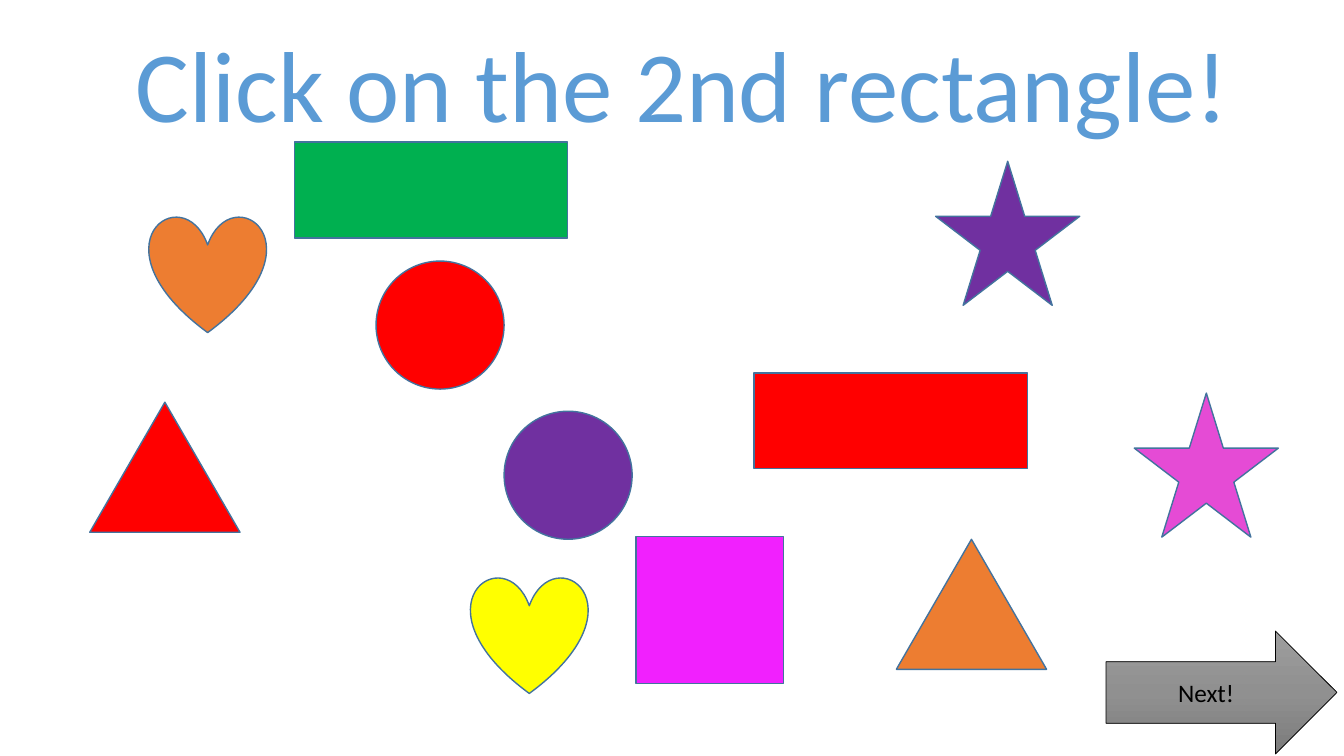
from copy import deepcopy

from pptx import Presentation
from pptx.dml.color import RGBColor
from pptx.enum.shapes import MSO_SHAPE
from pptx.enum.text import MSO_ANCHOR, MSO_AUTO_SIZE, PP_ALIGN
from pptx.oxml.ns import qn
from pptx.util import Pt

EMU_PER_PX = 9144
SIZES = {
    MSO_SHAPE.HEART: (116, 116),
    MSO_SHAPE.ISOSCELES_TRIANGLE: (149, 129),
    MSO_SHAPE.OVAL: (127, 127),
    MSO_SHAPE.RECTANGLE: (271, 95),
    MSO_SHAPE.STAR_5_POINT: (143, 143),
}
SQUARE = (146, 146)
ORANGE, PURPLE, RED = "ED7D31", "7030A0", "FF0000"


def px(*lengths):
    """Turn px lengths into EMU."""
    return [length * EMU_PER_PX for length in lengths]


def color(code):
    """Turn a hex string into a colour."""
    return RGBColor.from_string(code)


class ShapeQuiz:
    """Draws the quiz elements on one slide in a shared style."""

    font = "Calibri"
    outline = "43739E"
    title_color = "5B9BD5"

    def __init__(self, slide):
        """Keep the slide to draw on."""
        self.shapes = slide.shapes

    def add_text(self, frame, text, size, code):
        """Put one centred run in a text frame."""
        para = frame.paragraphs[0]
        para.alignment = PP_ALIGN.CENTER
        span = para.add_run()
        span.text = text
        span.font.name = self.font
        span.font.size = Pt(size)
        span.font.color.rgb = color(code)

    def title(self, left, top, width, height, text):
        """Add the question in a box that does not wrap."""
        box = self.shapes.add_textbox(*px(left, top, width, height))
        box.text_frame.word_wrap = False
        box.text_frame.auto_size = MSO_AUTO_SIZE.SHAPE_TO_FIT_TEXT
        self.add_text(box.text_frame, text, 72, self.title_color)

    def outlined(self, kind, left, top, size, line, weight):
        """Add a shape with an outline and no shadow."""
        shape = self.shapes.add_shape(kind, *px(left, top, *size))
        shape.shadow.inherit = False
        shape.line.color.rgb = color(line)
        shape.line.width = Pt(weight)
        return shape

    def answer(self, kind, left, top, fill, size=None):
        """Add one plain coloured shape."""
        shape = self.outlined(kind, left, top, size or SIZES[kind], self.outline, 1)
        shape.fill.solid()
        shape.fill.fore_color.rgb = color(fill)

    def next_arrow(self, left, top, size, text, shades):
        """Add the arrow with an even top-to-bottom gradient."""
        arrow = self.outlined(MSO_SHAPE.RIGHT_ARROW, left, top, size, "000000", 0.5)
        arrow.fill.gradient()
        arrow.fill.gradient_angle = 270
        stop_list = arrow.element.spPr.find(".//" + qn("a:gsLst"))
        for _ in shades[2:]:
            stop_list.append(deepcopy(stop_list[0]))
        for index, (stop, shade) in enumerate(zip(arrow.fill.gradient_stops, shades)):
            stop.position = index / (len(shades) - 1)
            stop.color.rgb = color(shade)
        arrow.text_frame.vertical_anchor = MSO_ANCHOR.MIDDLE
        self.add_text(arrow.text_frame, text, 18, "000000")


def main():
    """Build and save the slide."""
    deck = Presentation()
    deck.slide_width, deck.slide_height = px(1333, 750)
    quiz = ShapeQuiz(deck.slides.add_slide(deck.slide_layouts[6]))

    quiz.answer(MSO_SHAPE.HEART, 148, 214, ORANGE)
    quiz.answer(MSO_SHAPE.ISOSCELES_TRIANGLE, 889, 535, ORANGE)
    quiz.answer(MSO_SHAPE.OVAL, 500, 408, PURPLE)
    quiz.answer(MSO_SHAPE.RECTANGLE, 631, 532, "F120FE", SQUARE)
    quiz.answer(MSO_SHAPE.STAR_5_POINT, 928, 160, PURPLE)
    quiz.answer(MSO_SHAPE.RECTANGLE, 292, 141, "00B050")
    quiz.title(119, 17, 1116, 131, "Click on the 2nd rectangle!")
    quiz.next_arrow(1097, 626, (229, 122), "Next!", ["9D9D9D", "909090", "7C7C7C"])
    quiz.answer(MSO_SHAPE.RECTANGLE, 748, 370, RED)
    quiz.answer(MSO_SHAPE.HEART, 467, 572, "FFFF00")
    quiz.answer(MSO_SHAPE.OVAL, 373, 259, RED)
    quiz.answer(MSO_SHAPE.STAR_5_POINT, 1125, 390, "E54BD5")
    quiz.answer(MSO_SHAPE.ISOSCELES_TRIANGLE, 89, 399, RED)

    deck.save("out.pptx")


if __name__ == "__main__":
    main()
